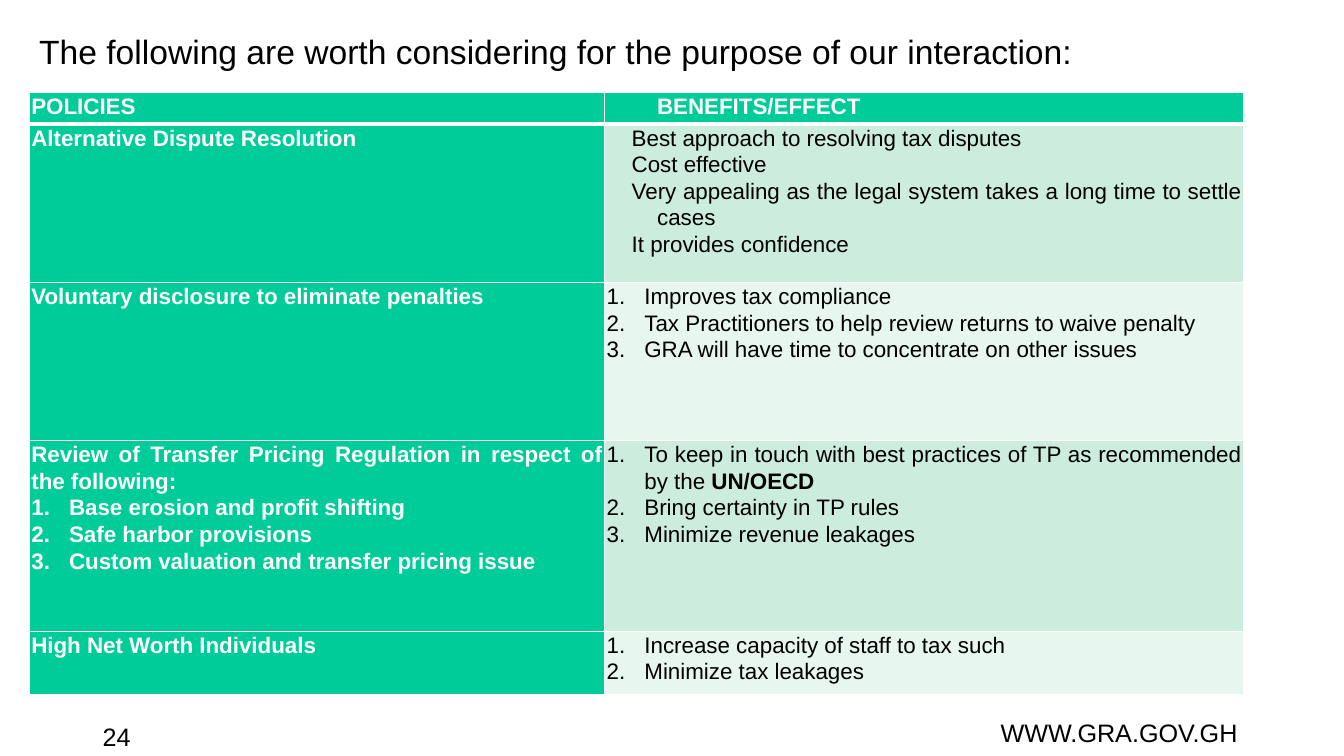
from lxml import etree
from pptx import Presentation
from pptx import util as u
from pptx.dml.color import RGBColor
from pptx.enum import text
from pptx.oxml import ns

GREEN, PALE, PALER = "00CC99", "CCECDE", "E7F6EF"
WHITE, BLACK = "FFFFFF", "000000"


def colour(value):
    return RGBColor.from_string(value)


def format_font(font, size, value, bold=False):
    font.name = "Arial"
    font.size = u.Pt(size)
    font.bold = bold
    font.color.rgb = colour(value)


deck = Presentation()
deck.slide_width, deck.slide_height = u.Cm(33.87), u.Cm(19.05)
page = deck.slides.add_slide(deck.slide_layouts[6])

# Title, web address and page number
labels = [
    ("The following are worth considering for the purpose of our interaction:",
     (0.74, 0.74, 26.8, 1.22), 24, text.PP_ALIGN.LEFT, text.MSO_ANCHOR.MIDDLE),
    ("WWW.GRA.GOV.GH",
     (12.14, 18.03, 19.3, 1.02), 18, text.PP_ALIGN.RIGHT, text.MSO_ANCHOR.TOP),
    ("24",
     (2.34, 18.11, 7.62, 1.02), 18, text.PP_ALIGN.LEFT, text.MSO_ANCHOR.TOP),
]
for words, place, size, align, anchor in labels:
    box = page.shapes.add_textbox(*[u.Cm(length) for length in place])
    box.text_frame.word_wrap = True
    box.text_frame.vertical_anchor = anchor
    box.text_frame.text = words
    para = box.text_frame.paragraphs[0]
    para.alignment = align
    para.line_spacing = 0.93
    format_font(para.runs[0].font, size, BLACK)

# Table wording: (paragraph style, text), with asterisks around bold words
rows = [
    ([("plain", "POLICIES")],
     [("indented", "BENEFITS/EFFECT")]),
    ([("plain", "Alternative Dispute Resolution")],
     [("hanging", "Best approach to resolving tax disputes"),
      ("hanging", "Cost effective"),
      ("hanging", "Very appealing as the legal system takes a long time to settle cases"),
      ("hanging", "It provides confidence")]),
    ([("plain", "Voluntary disclosure to eliminate penalties")],
     [("numbered", "Improves tax compliance"),
      ("numbered", "Tax Practitioners to help review returns to waive penalty"),
      ("numbered", "GRA will have time to concentrate on other issues")]),
    ([("plain", "Review of Transfer Pricing Regulation in respect of the following:"),
      ("numbered", "Base erosion and profit shifting"),
      ("numbered", "Safe harbor provisions"),
      ("numbered", "Custom valuation and transfer pricing issue")],
     [("numbered", "To keep in touch with best practices of TP as recommended by the *UN/OECD*"),
      ("numbered", "Bring certainty in TP rules"),
      ("numbered", "Minimize revenue leakages")]),
    ([("plain", "High Net Worth Individuals")],
     [("numbered", "Increase capacity of staff to tax such"),
      ("numbered", "Minimize tax leakages")]),
]
# Left margin and first-line indent of each paragraph style
indents = {"plain": (0, 0), "indented": (1.27, 0),
           "hanging": (1.27, -0.64), "numbered": (0.95, -0.95)}

# Table grid
widths = [14.5, 16.1]
heights = [0.79, 3.99, 3.99, 4.8, 1.6]
table = page.shapes.add_table(
    len(rows), len(widths), u.Cm(0.74), u.Cm(2.34),
    u.Cm(sum(widths)), u.Cm(sum(heights))).table
for column, width in zip(table.columns, widths):
    column.width = u.Cm(width)
for row, height in zip(table.rows, heights):
    row.height = u.Cm(height)

# Table cells
for row_index, row in enumerate(rows):
    for column_index, entries in enumerate(row):
        cell = table.cell(row_index, column_index)
        heading = row_index == 0 or column_index == 0
        cell.margin_left = cell.margin_right = u.Cm(0.05)
        cell.margin_top = cell.margin_bottom = 0
        cell.fill.solid()
        cell.fill.fore_color.rgb = colour(
            GREEN if heading else PALE if row_index % 2 else PALER)

        # White borders, thicker under the header
        properties = cell._tc.get_or_add_tcPr()
        for position, side in enumerate(("lnL", "lnR", "lnT", "lnB")):
            under_header = (row_index, side) in ((0, "lnB"), (1, "lnT"))
            line = etree.Element(ns.qn("a:" + side),
                                 w=str(u.Pt(3 if under_header else 1)))
            fill = etree.SubElement(line, ns.qn("a:solidFill"))
            etree.SubElement(fill, ns.qn("a:srgbClr"), val=WHITE)
            properties.insert(position, line)

        # Paragraphs
        cell.text_frame.text = "\n".join(words for style, words in entries)
        for para, (style, words) in zip(cell.text_frame.paragraphs, entries):
            para.alignment = text.PP_ALIGN.JUSTIFY
            para.line_spacing = 1.07
            margin, indent = indents[style]
            settings = para._p.get_or_add_pPr()
            settings.set("marL", str(u.Cm(margin)))
            settings.set("indent", str(u.Cm(indent)))
            if style == "numbered":
                etree.SubElement(settings, ns.qn("a:buFont"), typeface="+mj-lt")
                etree.SubElement(settings, ns.qn("a:buAutoNum"), type="arabicPeriod")
            else:
                etree.SubElement(settings, ns.qn("a:buNone"))
            para.clear()
            for part_index, part in enumerate(words.split("*")):
                if part:
                    span = para.add_run()
                    span.text = part
                    format_font(span.font, 16, WHITE if heading else BLACK,
                                heading or part_index % 2 == 1)

deck.save("out.pptx")
